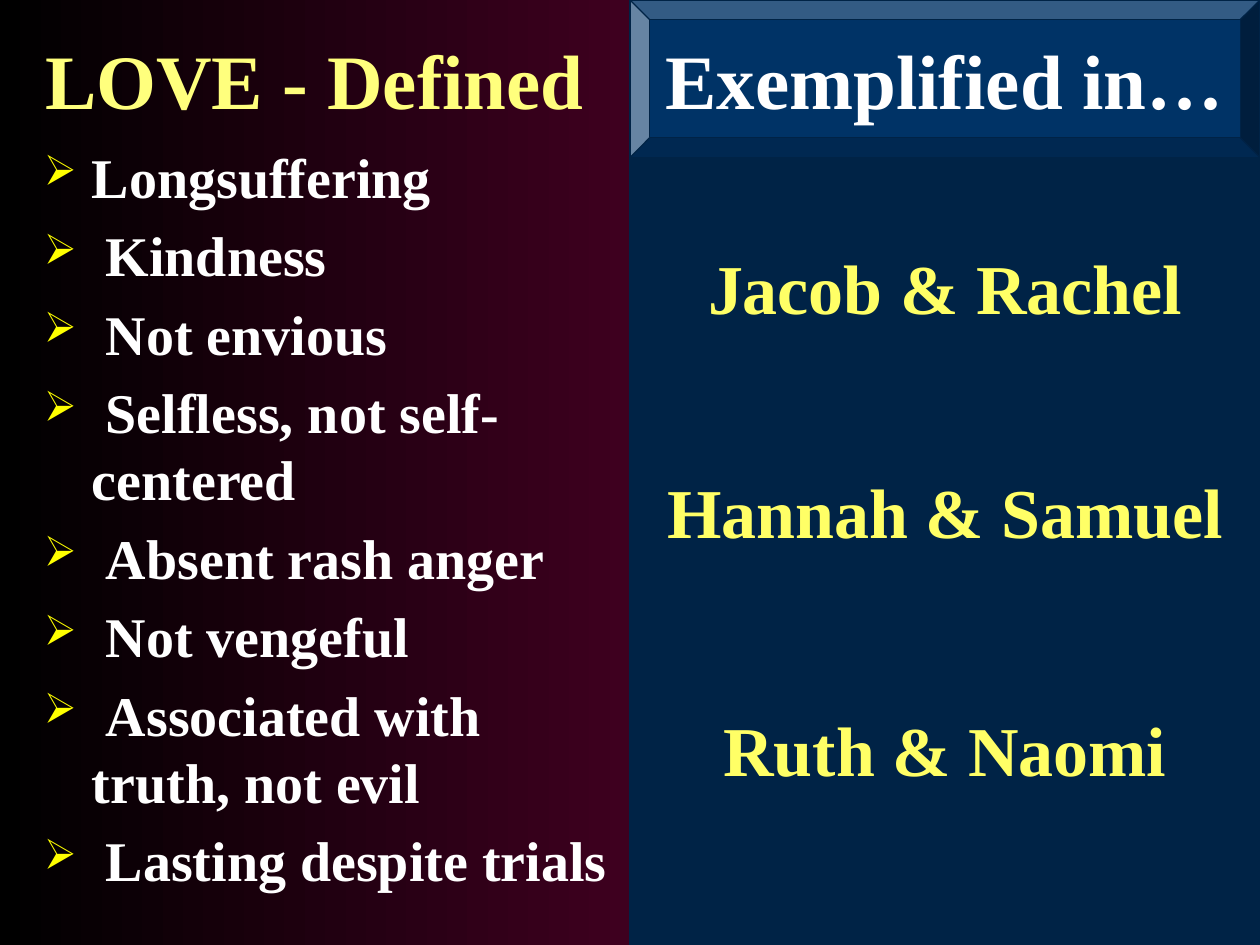
from copy import deepcopy

from lxml import etree
from pptx import Presentation
from pptx.dml.color import RGBColor
from pptx.enum.shapes import MSO_SHAPE
from pptx.enum.text import MSO_ANCHOR, PP_ALIGN
from pptx.oxml.ns import qn
from pptx.util import Inches, Pt

CENTER = PP_ALIGN.CENTER
MIDDLE = MSO_ANCHOR.MIDDLE
BEVEL = MSO_SHAPE.BEVEL
RECTANGLE = MSO_SHAPE.RECTANGLE

FONT = "Times New Roman"
WHITE = "FFFFFF"
NAVY = "002346"
VIRTUES = [
    "Longsuffering",
    "Kindness",
    "Not envious",
    "Selfless, not self-centered",
    "Absent rash anger",
    "Not vengeful",
    "Associated with truth, not evil",
    "Lasting despite trials",
]
EXAMPLES = [
    ("Jacob & Rachel", 1.89),
    ("Hannah & Samuel", 3.67),
    ("Ruth & Naomi", 5.56),
]


def rgb(color):
    return RGBColor.from_string(color)


def add_run(paragraph, text, size, color, bold=True):
    run = paragraph.add_run()
    run.text = text
    run.font.size = Pt(size)
    run.font.bold = bold
    run.font.color.rgb = rgb(color)
    run.font.name = FONT
    return run


def add_centered_text(frame, text, size, color):
    frame.word_wrap = True
    paragraph = frame.paragraphs[0]
    paragraph.alignment = CENTER
    return add_run(paragraph, text, size, color)


def add_text_shadow(run):
    fill = run.font._element.find(qn("a:solidFill"))
    effects = etree.Element(qn("a:effectLst"))
    shadow = etree.SubElement(effects, qn("a:outerShdw"), dist="38100", dir="2700000")
    etree.SubElement(shadow, qn("a:srgbClr"), val="000000")
    fill.addnext(effects)


def paint_background(slide):
    fill = slide.background.fill
    fill.gradient()
    fill.gradient_angle = 0
    first_stop = fill.gradient_stops[0]._gs
    first_stop.addnext(deepcopy(first_stop))
    colors = ["000000", "3E001F", "660033"]
    for stop, color, position in zip(fill.gradient_stops, colors, [0, 0.5, 1]):
        stop.color.rgb = rgb(color)
        stop.position = position


def add_title(slide):
    title = slide.shapes.title
    title.left, title.top = Inches(0), Inches(0)
    title.width, title.height = Inches(5), Inches(1.25)
    title.text_frame.vertical_anchor = MIDDLE
    add_text_shadow(add_centered_text(title.text_frame, "LOVE - Defined", 44, "FFFF7D"))


def add_bullet(paragraph):
    properties = paragraph._p.get_or_add_pPr()
    properties.set("marL", str(Inches(0.38)))
    properties.set("indent", str(Inches(-0.38)))
    color = etree.SubElement(properties, qn("a:buClr"))
    etree.SubElement(color, qn("a:srgbClr"), val="FFFF00")
    etree.SubElement(properties, qn("a:buSzPct"), val="75000")
    etree.SubElement(properties, qn("a:buChar"), char="➢")


def add_virtues(slide):
    box = slide.shapes.add_textbox(Inches(0.25), Inches(1.08), Inches(4.75), Inches(6.25))
    frame = box.text_frame
    frame.word_wrap = True
    for index, virtue in enumerate(VIRTUES):
        paragraph = frame.add_paragraph() if index else frame.paragraphs[0]
        paragraph.space_before = Pt(6.4)
        add_bullet(paragraph)
        if index:
            add_run(paragraph, " ", 32, WHITE, bold=index == 1)
        add_run(paragraph, virtue, 32, WHITE)


def add_panel(slide, preset, top, height, color):
    panel = slide.shapes.add_shape(preset, Inches(5), Inches(top), Inches(5), Inches(height))
    panel.shadow.inherit = False
    panel.fill.solid()
    panel.fill.fore_color.rgb = rgb(color)
    panel.line.color.rgb = rgb(NAVY)
    panel.line.width = Pt(0.75)
    return panel


def add_example(slide, names, top):
    box = slide.shapes.add_textbox(Inches(5), Inches(top), Inches(5), Inches(0.77))
    add_centered_text(box.text_frame, names, 40, "FFFF66")


def main():
    presentation = Presentation()
    presentation.slide_width = Inches(10)
    presentation.slide_height = Inches(7.5)
    slide = presentation.slides.add_slide(presentation.slide_layouts[5])
    paint_background(slide)
    add_title(slide)
    add_virtues(slide)
    heading = add_panel(slide, BEVEL, 0, 1.25, "003366")
    heading.text_frame.vertical_anchor = MIDDLE
    add_centered_text(heading.text_frame, "Exemplified in…", 44, WHITE)
    add_panel(slide, RECTANGLE, 1.25, 6.25, NAVY)
    for names, top in EXAMPLES:
        add_example(slide, names, top)
    presentation.save("out.pptx")


if __name__ == "__main__":
    main()
